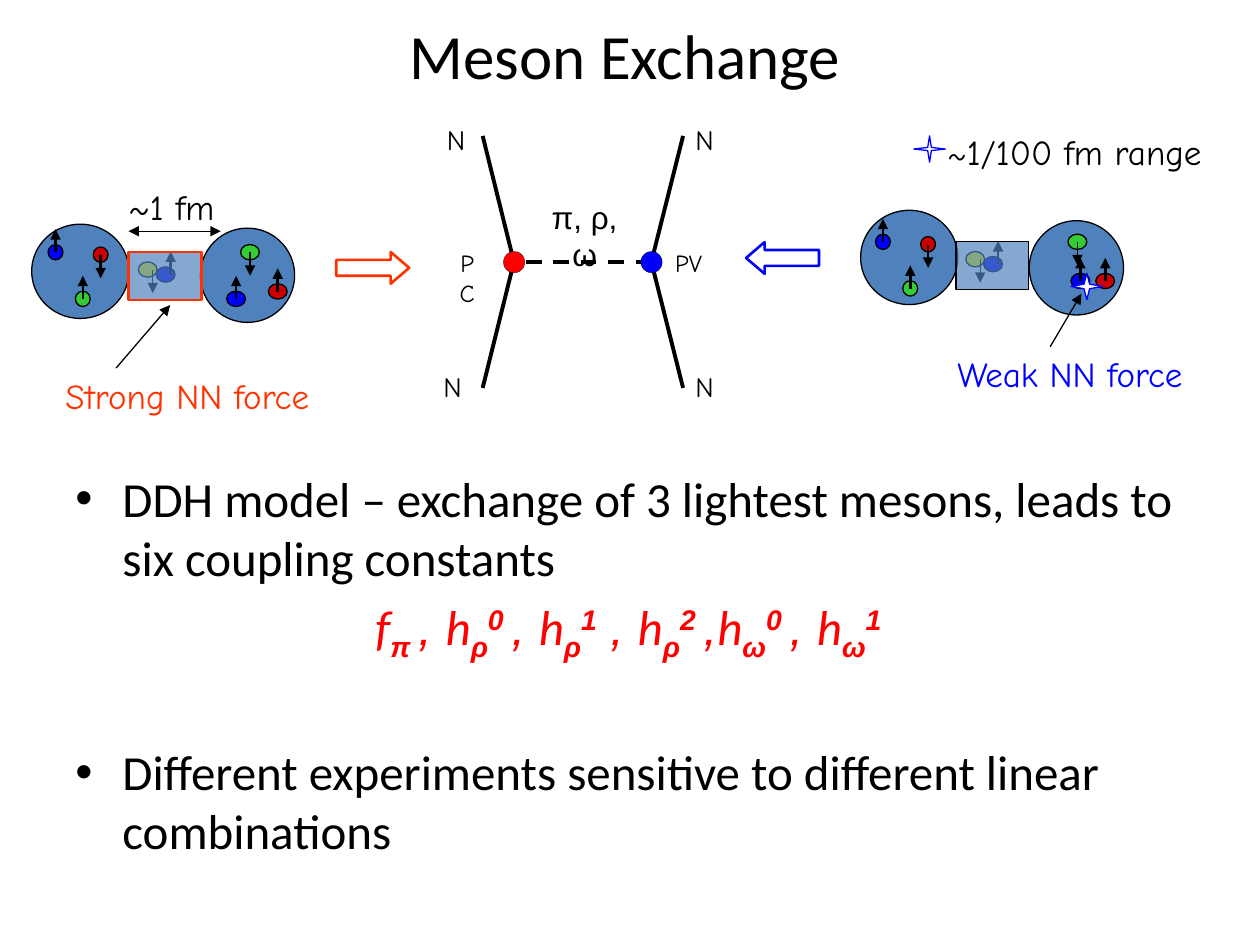
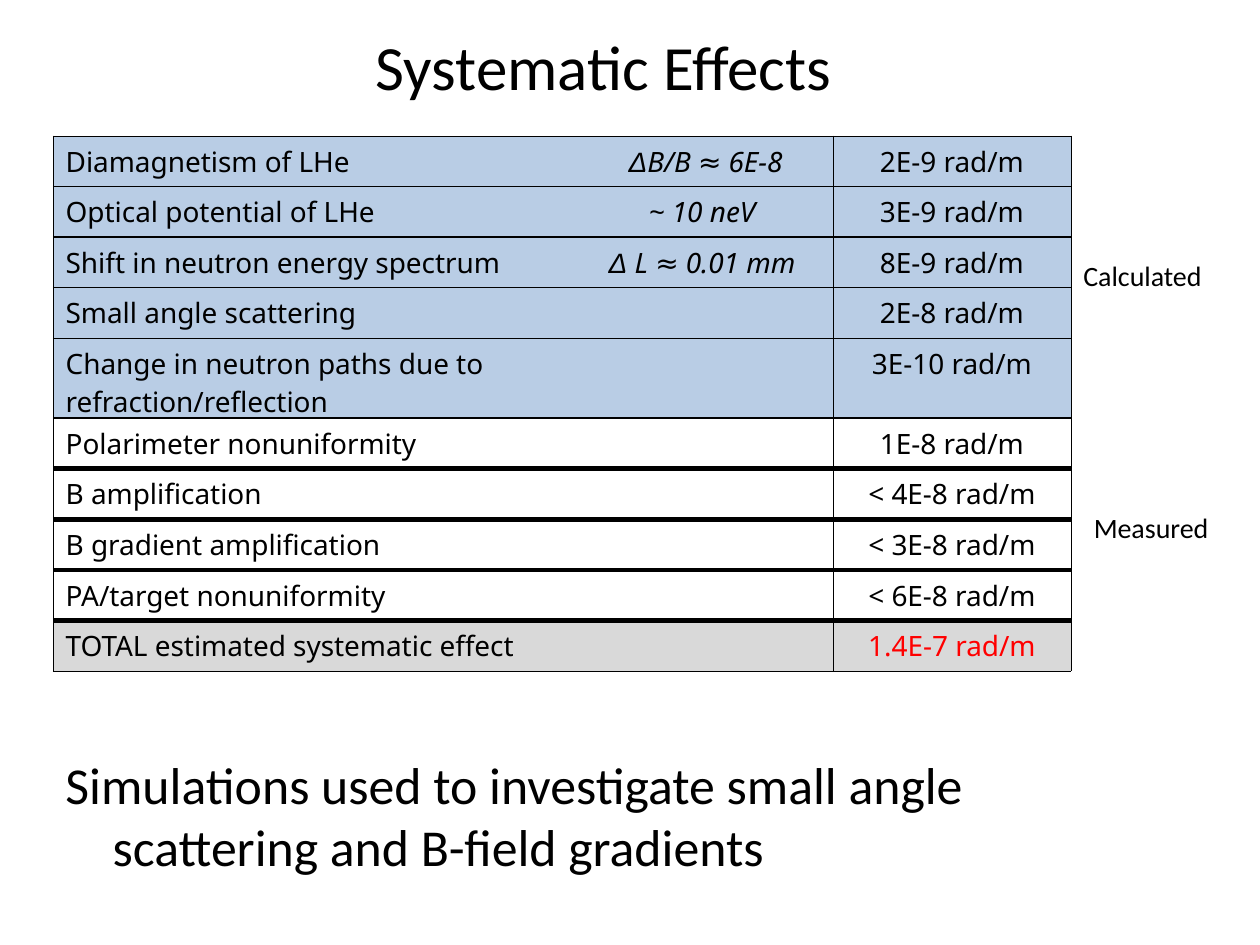
from lxml.etree import SubElement
from pptx import Presentation
from pptx.dml.color import RGBColor
from pptx.enum.dml import MSO_LINE
from pptx.enum.shapes import MSO_CONNECTOR, MSO_SHAPE
from pptx.enum.text import MSO_ANCHOR, PP_ALIGN
from pptx.oxml.ns import qn
from pptx.util import Cm, Pt

COLORS = {
    "black": "000000", "white": "FFFFFF", "nucleon": "4F81BD",
    "blue": "0000FF", "red": "FF0000", "quark red": "CC0000",
    "green": "33CC33", "yellow": "FFFF00", "strong": "FF3300",
    "calculated": "B9CDE5", "total": "D9D9D9",
}
BODY, HAND, GREEK, TABLE = "Calibri", "Comic Neue", "Arial", "Noto Sans"
HANGING = 0.95


def rgb(name):
    return RGBColor.from_string(COLORS[name])


class Deck:
    """Holds the style and the current slide."""

    def __init__(self):
        self.presentation = Presentation()
        self.presentation.slide_width = Cm(25.4)
        self.presentation.slide_height = Cm(19.05)
        self.slide = None

    def new_slide(self, title, width, height):
        layout = self.presentation.slide_layouts[6]
        self.slide = self.presentation.slides.add_slide(layout)
        frame = self.text_box(1.27, 0, width, height)
        frame.vertical_anchor = MSO_ANCHOR.MIDDLE
        paragraph = self.paragraph(frame, align=PP_ALIGN.CENTER)
        self.run(paragraph, title, 36)

    # Text
    def text_box(self, left, top, width, height):
        shape = self.slide.shapes.add_textbox(Cm(left), Cm(top), Cm(width), Cm(height))
        shape.text_frame.word_wrap = True
        return shape.text_frame

    def paragraph(self, frame, align=PP_ALIGN.LEFT, margin=0, indent=0,
                  bullet=False, space_before=0):
        paragraph = frame.paragraphs[0]
        if paragraph.runs:
            paragraph = frame.add_paragraph()
        properties = paragraph._p.get_or_add_pPr()
        properties.set("marL", str(Cm(margin)))
        properties.set("indent", str(Cm(indent)))
        if bullet:
            SubElement(properties, qn("a:buFont"), typeface="Arial")
            SubElement(properties, qn("a:buChar"), char="•")
        paragraph.alignment = align
        paragraph.space_before = Pt(space_before)
        return paragraph

    def run(self, paragraph, text, size, font=BODY, color="black",
            bold=False, italic=False, baseline=0):
        run = paragraph.add_run()
        run.text = text
        run.font.size = Pt(size)
        run.font.name = font
        run.font.bold = bold
        run.font.italic = italic
        run.font.color.rgb = rgb(color)
        if baseline:
            run._r.get_or_add_rPr().set("baseline", str(baseline * 1000))

    def label(self, text, left, top, width, height, size, font=HAND,
              color="black", align=PP_ALIGN.LEFT):
        paragraph = self.paragraph(self.text_box(left, top, width, height), align)
        self.run(paragraph, text, size, font, color)
        return paragraph

    # Shapes and lines
    def shape(self, kind, left, top, width, height, fill=None, line="black",
              weight=0.75, adjustments=(), opacity=None, dash=None):
        shape = self.slide.shapes.add_shape(kind, Cm(left), Cm(top), Cm(width), Cm(height))
        shape.shadow.inherit = False
        for index, value in enumerate(adjustments):
            shape.adjustments[index] = value
        if fill:
            shape.fill.solid()
            shape.fill.fore_color.rgb = rgb(fill)
        else:
            shape.fill.background()
        if opacity:
            color = shape._element.spPr.find(qn("a:solidFill"))[0]
            SubElement(color, qn("a:alpha"), val=str(opacity * 1000))
        shape.line.color.rgb = rgb(line)
        shape.line.width = Pt(weight)
        if dash:
            shape.line.dash_style = dash
        return shape

    def line(self, start, end, weight=0.75, dash=None, ends=()):
        connector = self.slide.shapes.add_connector(
            MSO_CONNECTOR.STRAIGHT, *map(Cm, (*start, *end)))
        connector.line.color.rgb = rgb("black")
        connector.line.width = Pt(weight)
        if dash:
            connector.line.dash_style = dash
        for end_name in ends:
            SubElement(connector.line._get_or_add_ln(), qn(f"a:{end_name}"), type="triangle")
        SubElement(connector._element.spPr, qn("a:effectLst"))

    def star(self, left, top, point):
        self.shape(MSO_SHAPE.STAR_4_POINT, left, top, 0.64, 0.53, "white", "blue",
                   adjustments=[point])

    # Two nucleons with their quarks, and the mesons between them
    def nucleon_pair(self, left_nucleon, right_nucleon, blue_quark, shift=(0, 0),
                     outline="black", weight=0.75):
        dx, dy = shift
        for (x, y), width in ((left_nucleon, 1.96), (right_nucleon, 1.9)):
            self.shape(MSO_SHAPE.OVAL, x, y, width, 1.9, "nucleon")
        up, down = -0.47, 0.47
        quarks = [
            ("blue", 0.97, 4.93, 0.3, up, 1.5), ("green", 1.52, 5.87, 0.3, up, 1.5),
            ("quark red", 1.88, 4.98, 0.3, down, 1.5), ("green", 4.85, 4.93, 0.38, down, 0.75),
            ("blue", *blue_quark, 0.38, up, 1.5), ("quark red", 5.41, 5.72, 0.38, up, 1.5),
        ]
        mesons = [("blue", 3.15, 5.38, 0.38, up, 1.5), ("yellow", 2.79, 5.28, 0.38, down, 0.75)]
        for particles, offset in ((quarks, 0), (mesons, 0.1)):
            for color, x, y, width, _, _ in particles:
                self.shape(MSO_SHAPE.OVAL, x + dx, y + dy, width, 0.31, color)
            for _, x, y, width, spin, spin_weight in particles:
                spin_x, spin_y = x + dx + width / 2 + offset, y + dy + 0.16
                self.line((spin_x, spin_y), (spin_x, spin_y + spin), spin_weight,
                          ends=["tailEnd"])
        self.shape(MSO_SHAPE.RECTANGLE, 2.59 + dx, 5.08 + dy, 1.47, 0.97, "nucleon",
                   outline, weight, opacity=69)

    def table(self, left, top, widths, heights, rows, fills, rules):
        table = self.slide.shapes.add_table(
            len(rows), len(widths), Cm(left), Cm(top),
            Cm(sum(widths)), Cm(sum(heights))).table
        table.first_row = table.horz_banding = False
        for column, width in zip(table.columns, widths):
            column.width = Cm(width)
        for index, (row, height) in enumerate(zip(rows, heights)):
            table.rows[index].height = Cm(height)
            for column, runs in enumerate(row):
                cell = table.cell(index, column)
                align = PP_ALIGN.CENTER if column else PP_ALIGN.LEFT
                paragraph = self.paragraph(cell.text_frame, align)
                for text, style in runs:
                    self.run(paragraph, text, 16, **{"font": TABLE, **style})
                self.borders(cell, lnL=0 if column == 1 else 0.25,
                             lnR=0.25 if column else 0,
                             lnT=rules[index], lnB=rules[index + 1])
                cell.fill.solid()
                cell.fill.fore_color.rgb = rgb(fills[index])

    def borders(self, cell, **weights):
        for side, weight in weights.items():
            line = SubElement(cell._tc.get_or_add_tcPr(), qn(f"a:{side}"), w=str(Pt(weight)))
            if weight:
                fill = SubElement(line, qn("a:solidFill"))
                SubElement(fill, qn("a:srgbClr"), val=COLORS["black"])
            else:
                SubElement(line, qn("a:noFill"))


def meson_exchange(deck):
    deck.new_slide("Meson Exchange", 22.66, 2.21)

    # Model and coupling constants
    frame = deck.text_box(1.27, 9.32, 22.66, 8.13)
    paragraph = deck.paragraph(frame, margin=HANGING, indent=-HANGING, bullet=True)
    deck.run(paragraph, "DDH model – exchange of 3 lightest mesons, leads to "
             "six coupling constants", 28)
    formula = deck.paragraph(frame, margin=6.05, space_before=5.6)
    couplings = [
        ("f", "π ", "", ", "), ("h", "ρ", "0 ", ", "), ("h", "ρ", "1", " , "),
        ("h", "ρ", "2 ", ","), ("h", "ω", "0 ", ", "), ("h", "ω", "1", ""),
    ]
    for symbol, meson, isospin, separator in couplings:
        pieces = [(symbol, BODY, False, 0), (meson, GREEK, True, -25),
                  (isospin, GREEK, True, 30), (separator, GREEK, False, 0)]
        for text, font, bold, baseline in pieces:
            if text:
                deck.run(formula, text, 28, font, "red", bold, True, baseline)
    paragraph = deck.paragraph(frame, margin=HANGING, indent=-HANGING, bullet=True,
                               space_before=45)
    deck.run(paragraph, "Different experiments sensitive to different linear combinations", 28)

    # Weak force
    deck.label("Weak NN force", 19.05, 6.99, 5.92, 1.12, 20, color="blue")
    deck.star(18.42, 2.74, 0.083)
    distance = deck.label("~", 18.85, 2.51, 6.55, 1.3, 18)
    deck.run(distance, "1/100 fm range", 20, HAND)
    deck.nucleon_pair((17.35, 4.24), (20.75, 4.45), (4.91, 5.72), shift=(16.68, -0.21))
    deck.star(21.59, 5.51, 0.125)
    deck.line((21.17, 6.99), (21.8, 5.92), ends=["tailEnd"])

    # Strong force
    deck.nucleon_pair((0.64, 4.52), (4.04, 4.6), (4.57, 5.87), outline="strong", weight=1.5)
    deck.line((2.59, 4.66), (4.45, 4.66), ends=["headEnd", "tailEnd"])
    deck.label("~1 fm", 2.34, 3.61, 2.39, 1.12, 20)
    deck.label("Strong NN force", 1.07, 7.42, 6.78, 1.12, 20, color="strong")
    deck.line((2.34, 7.42), (3.43, 6.15), ends=["tailEnd"])

    # Exchange diagram
    middle, pc_x, pv_x = 5.28, 10.36, 13.13
    deck.line((pv_x, middle), (pc_x, middle), 2.25, MSO_LINE.DASH)
    for vertex_x, end_x, color in ((pc_x, 9.73, "red"), (pv_x, 13.77, "blue")):
        for end_y in (2.74, 7.82):
            deck.line((end_x, end_y), (vertex_x, middle), 2.25)
        deck.shape(MSO_SHAPE.FLOWCHART_CONNECTOR, vertex_x - 0.21, middle - 0.21, 0.43, 0.43,
                   color, weight=0.25, dash=MSO_LINE.ROUND_DOT)
    for left, top in ((8.76, 2.34), (13.77, 2.34), (8.69, 7.32), (13.77, 7.32)):
        deck.label("N", left, top, 0.97, 0.94, 16)
    deck.label("PC", 8.92, 4.88, 1, 0.84, 14, align=PP_ALIGN.CENTER)
    deck.label("PV", 13.32, 4.88, 1.12, 0.84, 14, align=PP_ALIGN.CENTER)
    deck.label("π, ρ, ω", 10.64, 3.86, 2.29, 1.02, 18, GREEK, align=PP_ALIGN.CENTER)

    # Block arrows towards the diagram
    for left, top, color, rotation in ((6.78, 5.08, "strong", 0), (15.04, 4.88, "blue", 180)):
        arrow = deck.shape(MSO_SHAPE.RIGHT_ARROW, left, top, 1.47, 0.64, line=color,
                           weight=1.5, adjustments=[0.5, 0.583])
        arrow.rotation = rotation


def systematic_effects(deck):
    deck.new_slide("Systematic Effects", 21.79, 2.62)
    frame = deck.text_box(1.07, 15.04, 22.86, 2.62)
    paragraph = deck.paragraph(frame, margin=HANGING, indent=-HANGING)
    deck.run(paragraph, "Simulations used to investigate small angle scattering "
             "and B-field gradients", 29.6)

    # Effects: name, estimate, size
    italic, red = {"italic": True}, {"color": "red"}
    delta = ("Δ", {"font": GREEK, "italic": True})
    effects = [
        ("Diamagnetism of LHe", [delta, ("B/B ≈ 6E-8", italic)], "2E-9"),
        ("Optical potential of LHe", [("~ 10 neV ", italic)], "3E-9"),
        ("Shift in neutron energy spectrum", [delta, (" L ≈ 0.01 mm ", italic)], "8E-9"),
        ("Small angle scattering", [], "2E-8"),
        ("Change in neutron paths due to refraction/reflection", [], "3E-10"),
        ("Polarimeter nonuniformity", [], "1E-8"),
        ("B amplification", [], "< 4E-8"),
        ("B gradient amplification", [], "< 3E-8"),
        ("PA/target nonuniformity", [], "< 6E-8"),
        ("TOTAL estimated systematic effect", [], "1.4E-7"),
    ]
    rows = [([(name, {})], estimate, [(f"{size} rad/m", red if name.startswith("TOTAL") else {})])
            for name, estimate, size in effects]
    deck.table(1.07, 2.74, [10.59, 5.13, 4.8], [1.02] * 4 + [1.6] + [1.02] * 5, rows,
               fills=["calculated"] * 5 + ["white"] * 4 + ["total"],
               rules=[0.25] + [1] * 5 + [3] * 4 + [0.25])

    # Side labels
    deck.label("Calculated", 21.59, 5.08, 2.95, 0.94, 16, BODY)
    deck.label("Measured", 21.8, 10.16, 2.9, 0.94, 16, BODY)


def main():
    deck = Deck()
    meson_exchange(deck)
    systematic_effects(deck)
    deck.presentation.save("out.pptx")


if __name__ == "__main__":
    main()
